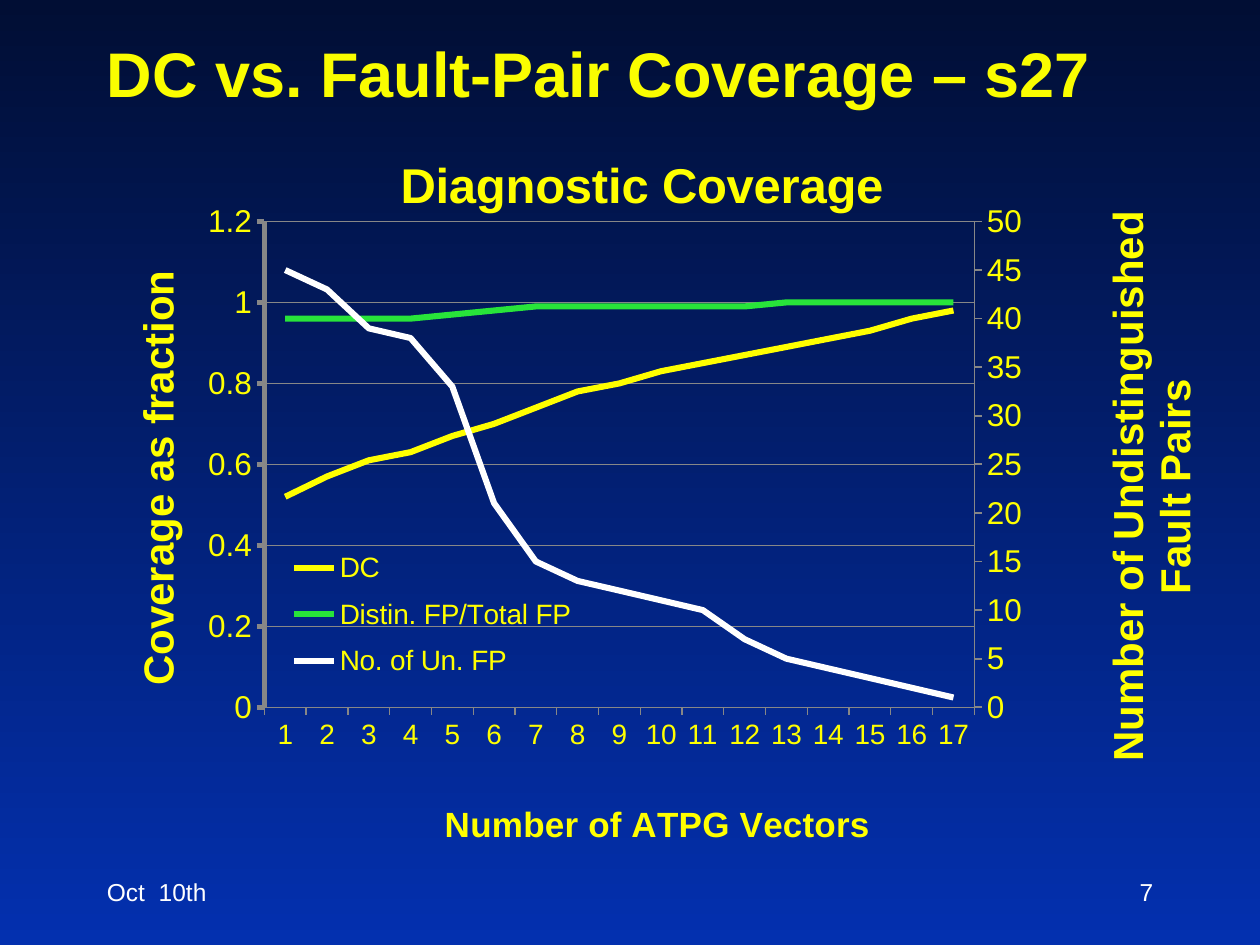
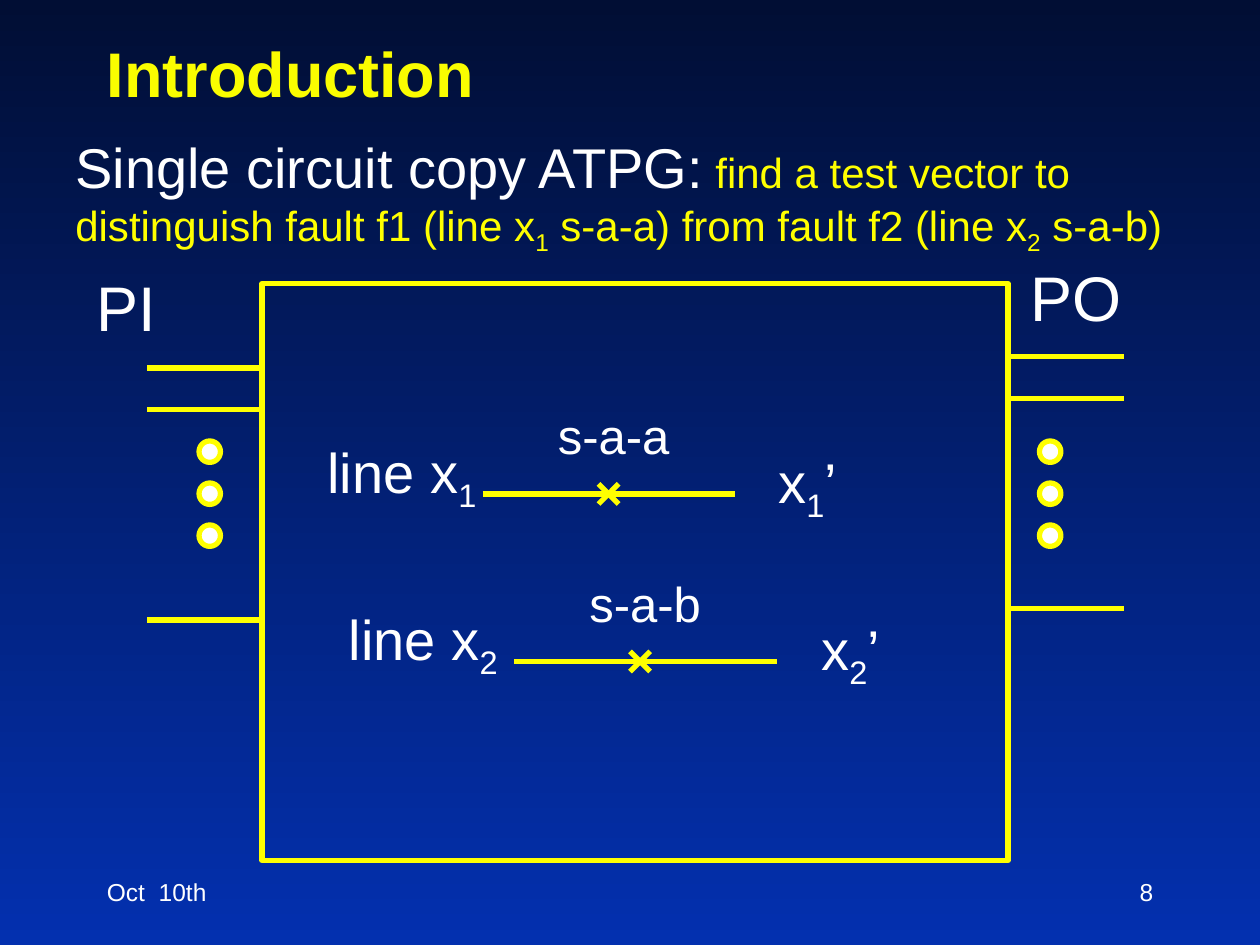
from copy import deepcopy

from lxml.etree import SubElement
from pptx import Presentation
from pptx.chart.axis import ValueAxis
from pptx.chart.data import CategoryChartData
from pptx.dml.color import RGBColor
from pptx.enum.chart import XL_CHART_TYPE, XL_LEGEND_POSITION, XL_TICK_MARK
from pptx.enum.shapes import MSO_CONNECTOR, MSO_SHAPE
from pptx.enum.text import MSO_ANCHOR, PP_ALIGN
from pptx.oxml.ns import qn
from pptx.util import Inches, Pt

NAVY = RGBColor(0x01, 0x0E, 0x34)
BLUE = RGBColor(0x03, 0x30, 0xAF)
GOLD = RGBColor(0xFA, 0xFD, 0x00)
YELLOW = RGBColor(0xFF, 0xFF, 0x00)
GREEN = RGBColor(0x28, 0xE4, 0x3A)
WHITE = RGBColor(0xFF, 0xFF, 0xFF)
GRAY = RGBColor(0x87, 0x87, 0x87)
FACE = "Arial"

DC = [0.52, 0.57, 0.61, 0.63, 0.67, 0.7, 0.74, 0.78, 0.8,
      0.83, 0.85, 0.87, 0.89, 0.91, 0.93, 0.96, 0.98]
RATIO = [0.96] * 4 + [0.97, 0.98] + [0.99] * 6 + [1] * 5
PAIRS = [45, 43, 39, 38, 33, 21, 15, 13, 12, 11, 10, 7, 5, 4, 3, 2, 1]


def place(node, index, x, y, w=None, h=None, inner=False):
    """Give a chart part a manual layout, as fractions of the chart."""
    for old in node.findall(qn("c:layout")):
        node.remove(old)
    layout = node.makeelement(qn("c:layout"))
    node.insert(index, layout)
    manual = SubElement(layout, qn("c:manualLayout"))
    pairs = [("layoutTarget", "inner" if inner else None),
             ("xMode", "edge"), ("yMode", "edge"),
             ("x", x), ("y", y), ("w", w), ("h", h)]
    for tag, val in pairs:
        if val is not None:
            SubElement(manual, qn(f"c:{tag}")).set("val", str(val))


def style(font, size, color=YELLOW, bold=False):
    """Set face, size, colour and weight of a font."""
    font.name, font.size, font.bold = FACE, Pt(size), bold
    font.color.rgb = color


def label(owner, text, size, x, y, turn=False):
    """Write and place the title of a chart or an axis."""
    frame = owner.text_frame
    run = frame.paragraphs[0].add_run()
    run.text = text
    style(run.font, size, bold=True)
    rich = frame.paragraphs[0]._p.getparent()
    if turn:
        body = rich.find(qn("a:bodyPr"))
        body.set("rot", "-5400000")
        body.set("vert", "horz")
    place(rich.getparent().getparent(), 1, x, y)


def tune(axis, size, width):
    """Style the line, ticks and labels of an axis."""
    axis.major_tick_mark = XL_TICK_MARK.OUTSIDE
    axis.format.line.color.rgb = GRAY
    axis.format.line.width = Pt(width)
    style(axis.tick_labels.font, size)


def split(chart):
    """Move the last series to a second axis on the right and return it."""
    plot = chart.element.xpath(".//c:plotArea")[0]
    left = plot.find(qn("c:lineChart"))
    right = deepcopy(left)
    left.remove(left.findall(qn("c:ser"))[-1])
    for ser in right.findall(qn("c:ser"))[:-1]:
        right.remove(ser)
    left.addnext(right)
    cat = deepcopy(plot.find(qn("c:catAx")))
    val = deepcopy(plot.find(qn("c:valAx")))
    plot.find(qn("c:valAx")).addnext(val)
    val.addnext(cat)
    for node, own, other in ((cat, "5001", "5002"), (val, "5002", "5001")):
        node.find(qn("c:axId")).set("val", own)
        node.find(qn("c:crossAx")).set("val", other)
    for node, name in zip(right.findall(qn("c:axId")), ("5001", "5002")):
        node.set("val", name)
    cat.find(qn("c:delete")).set("val", "1")
    val.find(qn("c:axPos")).set("val", "r")
    val.find(qn("c:crosses")).set("val", "max")
    return ValueAxis(val)


class Deck:
    """Hold the shared style and the current slide."""

    def __init__(self):
        self.prs = Presentation()
        self.prs.slide_width, self.prs.slide_height = Inches(10), Inches(7.5)

    def page(self, title, number):
        """Start a slide with its backdrop, title and footer."""
        self.slide = self.prs.slides.add_slide(self.prs.slide_layouts[6])
        fill = self.slide.background.fill
        fill.gradient()
        fill.gradient_angle = 270
        for stop, color in zip(fill.gradient_stops, (NAVY, BLUE)):
            stop.color.rgb = color
        self.text(0.75, 0.25, 8.5, 0.67, [(title, 36, GOLD)],
                  anchor=MSO_ANCHOR.BOTTOM, bold=True)
        foot = MSO_ANCHOR.MIDDLE
        self.text(0.75, 6.83, 2.08, 0.5, [("Oct  10th", 14, WHITE)], anchor=foot)
        self.text(7.17, 6.83, 2.08, 0.5, [(str(number), 14, WHITE)],
                  anchor=foot, align=PP_ALIGN.RIGHT)

    def text(self, x, y, w, h, runs, anchor=MSO_ANCHOR.TOP,
             align=PP_ALIGN.LEFT, bold=False):
        """Add a text box; a run is text, size, colour and perhaps 'sub'."""
        box = self.slide.shapes.add_textbox(
            Inches(x), Inches(y), Inches(w), Inches(h))
        frame = box.text_frame
        frame.word_wrap = True
        frame.vertical_anchor = anchor
        para = frame.paragraphs[0]
        para.alignment = align
        for words, size, color, *sub in runs:
            run = para.add_run()
            run.text = words
            style(run.font, size, color, bold)
            if sub:
                run.font._element.set("baseline", "-25000")

    def line(self, x1, y1, x2, y2):
        """Add a straight yellow line."""
        link = self.slide.shapes.add_connector(
            MSO_CONNECTOR.STRAIGHT, Inches(x1), Inches(y1), Inches(x2), Inches(y2))
        link.line.color.rgb = YELLOW
        link.line.width = Pt(3)
        SubElement(link._element.spPr, qn("a:effectLst"))

    def shape(self, kind, x, y, w, h, fill=None):
        """Add a shape with a yellow outline."""
        item = self.slide.shapes.add_shape(
            kind, Inches(x), Inches(y), Inches(w), Inches(h))
        item.shadow.inherit = False
        if fill is None:
            item.fill.background()
        else:
            item.fill.solid()
            item.fill.fore_color.rgb = fill
        item.line.color.rgb = YELLOW
        item.line.width = Pt(3)

    def pins(self, x, top, dot):
        """Add a column of three wires and three dots."""
        for step in (0, 0.33, 2):
            self.line(x, top + step, x + 0.92, top + step)
        for i in range(3):
            self.shape(MSO_SHAPE.FLOWCHART_CONNECTOR, dot, 3.5 + i / 3,
                       0.17, 0.17, WHITE)

    def fault(self, num, kind, name, tag, wire, mark, out):
        """Add a faulty line with its name, tag, cross and output."""
        sub = (num, 32, WHITE, "sub")
        self.text(*name, 0.64, [("line x", 32, WHITE), sub])
        self.text(*tag, 1.17, 0.57, [(kind, 28, WHITE)])
        start, end, y = wire
        self.line(start, y, end, y)
        for rise in (-0.08, 0.08):
            self.line(mark - 0.08, y + rise, mark + 0.08, y - rise)
        self.text(*out, 1, 0.64, [("x", 32, WHITE), sub, ("’", 32, WHITE)])

    def chart(self, x, y, w, h):
        """Add the coverage chart with two value axes."""
        data = CategoryChartData()
        data.categories = [str(n) for n in range(1, 18)]
        data.add_series("DC", DC)
        data.add_series("Distin. FP/Total FP", RATIO)
        data.add_series("No. of Un. FP", PAIRS)
        chart = self.slide.shapes.add_chart(
            XL_CHART_TYPE.LINE, Inches(x), Inches(y), Inches(w), Inches(h), data).chart
        style(chart.font, 10)
        chart.plots[0].vary_by_categories = False
        for ser, color in zip(chart.plots[0].series, (YELLOW, GREEN, WHITE)):
            ser.smooth = False
            ser.format.line.color.rgb = color
            ser.format.line.width = Pt(3.5)

        left, base = chart.value_axis, chart.category_axis
        left.has_major_gridlines = False
        left.tick_labels.number_format = "General"
        left.tick_labels.number_format_is_linked = False
        right = split(chart)
        left.has_major_gridlines = True
        grid = left.major_gridlines.format.line
        grid.color.rgb, grid.width = GRAY, Pt(0.75)
        for axis, top, unit in ((left, 1.2, 0.2), (right, 50, 5)):
            axis.minimum_scale, axis.maximum_scale = 0, top
            axis.major_unit = unit
        tune(base, 16, 0.75)
        tune(left, 18, 3)
        tune(right, 18, 1)

        chart.has_title = True
        label(chart.chart_title, "Diagnostic Coverage", 28, 0.29, 0.04)
        chart.element.xpath("./c:chart/c:title/c:overlay")[0].set("val", "1")
        label(base.axis_title, "Number of ATPG Vectors", 20, 0.33, 0.92)
        label(left.axis_title, "Coverage as fraction", 24, 0.06, 0.2, True)
        label(right.axis_title, "Number of Undistinguished Fault Pairs",
              24, 0.89, 0.12, True)

        chart.has_legend = True
        chart.legend.position = XL_LEGEND_POSITION.RIGHT
        chart.legend.include_in_layout = False
        style(chart.legend.font, 16)
        place(chart.element.xpath(".//c:legend")[0], 1, 0.19, 0.57, 0.27, 0.21)
        place(chart.element.xpath(".//c:plotArea")[0], 0,
              0.181, 0.143, 0.608, 0.658, True)


def main():
    """Build both slides and save them."""
    deck = Deck()
    deck.page("DC vs. Fault-Pair Coverage – s27", 7)
    deck.chart(0.42, 0.92, 9.27, 5.87)

    deck.page("Introduction", 8)
    deck.shape(MSO_SHAPE.RECTANGLE, 2.08, 2.25, 5.92, 4.58)
    deck.text(0.67, 2.08, 0.75, 0.71, [("PI", 36, WHITE)])
    deck.text(8.08, 2, 1.08, 0.71, [("PO", 36, WHITE)])
    deck.pins(1.17, 2.92, 1.58)
    deck.pins(8, 2.83, 8.25)
    deck.text(0.5, 1, 9.17, 1.04, [
        ("Single circuit copy ATPG:", 32, WHITE),
        (" find a test vector to distinguish fault f1 (line x", 24, YELLOW),
        ("1", 24, YELLOW, "sub"),
        (" s-a-a) from fault f2 (line x", 24, YELLOW),
        ("2", 24, YELLOW, "sub"),
        (" s-a-b)", 24, YELLOW)])
    deck.fault("1", "s-a-a", (2.5, 3.42, 1.42), (4.33, 3.17),
               (3.83, 5.83, 3.92), 4.83, (6.08, 3.5))
    deck.fault("2", "s-a-b", (2.67, 4.75, 1.67), (4.58, 4.5),
               (4.08, 6.17, 5.25), 5.08, (6.42, 4.83))
    deck.prs.save("out.pptx")


if __name__ == "__main__":
    main()
